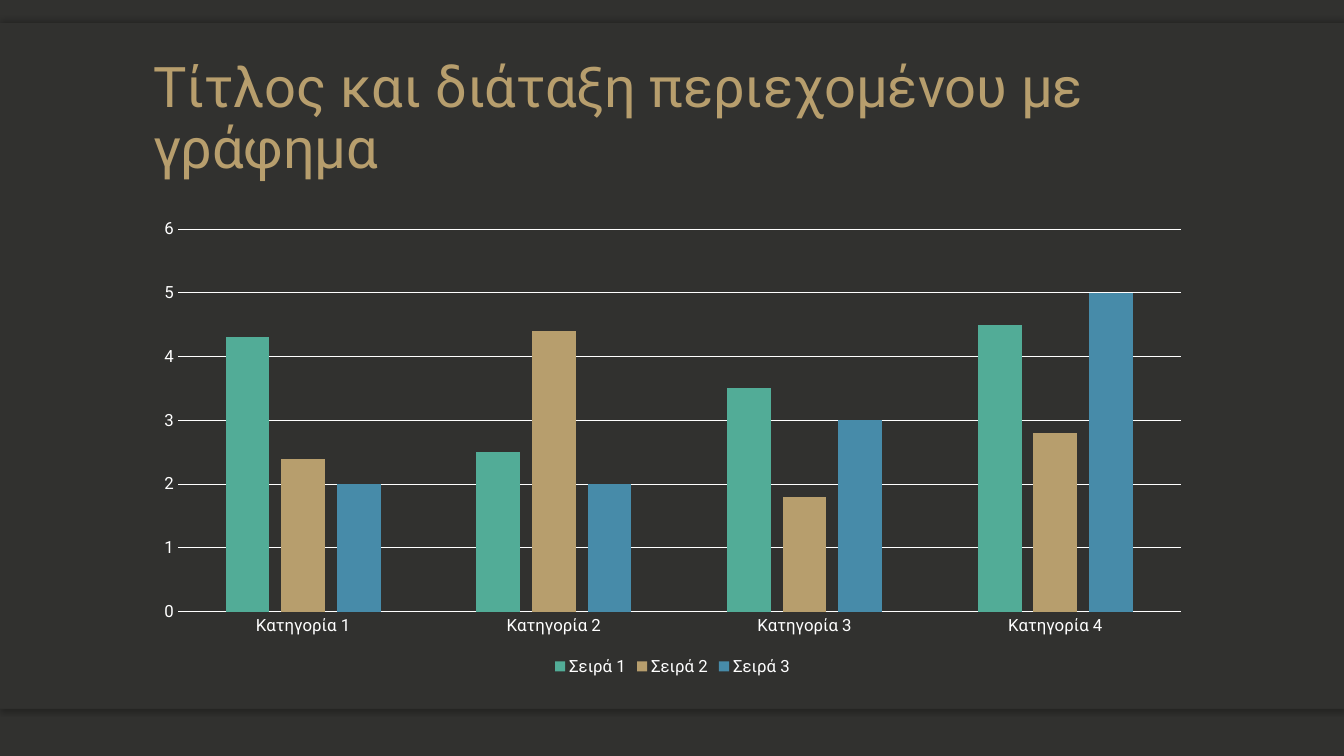
import pptx
import pptx.chart.data
import pptx.dml.color
import pptx.enum.chart
import pptx.enum.shapes
import pptx.enum.text
import pptx.oxml
import pptx.oxml.ns
import pptx.util
from pptx.util import Inches

THEME = {
    "font": "Roboto",
    "background": "31312F",
    "title": "B79E6D",
    "text": "FFFFFF",
    "series": ["52AC97", "B79E6D", "478BA9"],
    "title_size": 40,
    "chart_size": 10,
    "label_size": 12,
    "line_width": 0.75,
}


def color(code):
    return pptx.dml.color.RGBColor.from_string(code)


def style_font(font, size, code):
    font.name = THEME["font"]
    font.size = pptx.util.Pt(size)
    font.color.rgb = color(code)


deck = pptx.Presentation()
deck.slide_width = Inches(13.33)
deck.slide_height = Inches(7.5)
page = deck.slides.add_slide(deck.slide_layouts[6])
page.background.fill.solid()
page.background.fill.fore_color.rgb = color(THEME["background"])

bands = [(6.54, 0.49, 90), (0.23, 0.49, 270), (0.23, 6.8, None)]
for top, height, angle in bands:
    band = page.shapes.add_shape(
        pptx.enum.shapes.MSO_SHAPE.RECTANGLE, 0, Inches(top), deck.slide_width, Inches(height)
    )
    band.fill.solid()
    band.fill.fore_color.rgb = color(THEME["background"])
    band.line.fill.background()
    band.shadow.inherit = False
    if angle is not None:
        effects = band._element.spPr.find(pptx.oxml.ns.qn("a:effectLst"))
        effects.append(pptx.oxml.parse_xml(
            f'<a:outerShdw {pptx.oxml.ns.nsdecls("a")} blurRad="{pptx.util.Pt(4)}" '
            f'dist="{pptx.util.Pt(2)}" dir="{angle * 60000}" algn="ctr" rotWithShape="0">'
            '<a:srgbClr val="000000"><a:alpha val="25000"/></a:srgbClr></a:outerShdw>'
        ))

title = page.shapes.add_textbox(Inches(1.42), Inches(0.46), Inches(10.5), Inches(1.38))
title.text_frame.word_wrap = True
title.text_frame.vertical_anchor = pptx.enum.text.MSO_ANCHOR.BOTTOM
para = title.text_frame.paragraphs[0]
para.line_spacing = 0.9
span = para.add_run()
span.text = "Τίτλος και διάταξη περιεχομένου με γράφημα"
style_font(span.font, THEME["title_size"], THEME["title"])

data = pptx.chart.data.CategoryChartData()
data.categories = [f"Κατηγορία {number}" for number in range(1, 5)]
data.add_series("Σειρά 1", [4.3, 2.5, 3.5, 4.5])
data.add_series("Σειρά 2", [2.4, 4.4, 1.8, 2.8])
data.add_series("Σειρά 3", [2, 2, 3, 5])
chart = page.shapes.add_chart(
    pptx.enum.chart.XL_CHART_TYPE.COLUMN_CLUSTERED,
    Inches(1.42), Inches(2.08), Inches(10.5), Inches(4.67), data,
).chart
chart.has_title = False
style_font(chart.font, THEME["chart_size"], THEME["text"])

plot = chart.plots[0]
plot.gap_width = 219
plot.overlap = -27
plot.vary_by_categories = False
for series, code in zip(plot.series, THEME["series"]):
    series.format.fill.solid()
    series.format.fill.fore_color.rgb = color(code)
    series.invert_if_negative = False

for axis in (chart.category_axis, chart.value_axis):
    axis.major_tick_mark = pptx.enum.chart.XL_TICK_MARK.NONE
    axis.minor_tick_mark = pptx.enum.chart.XL_TICK_MARK.NONE
    style_font(axis.tick_labels.font, THEME["label_size"], THEME["text"])

value_axis = chart.value_axis
value_axis.minimum_scale = 0
value_axis.maximum_scale = 6
value_axis.major_unit = 1
value_axis.has_major_gridlines = True
value_axis.format.line.fill.background()
for line in (chart.category_axis.format.line, value_axis.major_gridlines.format.line):
    line.color.rgb = color(THEME["text"])
    line.width = pptx.util.Pt(THEME["line_width"])

chart.has_legend = True
chart.legend.position = pptx.enum.chart.XL_LEGEND_POSITION.BOTTOM
chart.legend.include_in_layout = False
style_font(chart.legend.font, THEME["label_size"], THEME["text"])

deck.save("out.pptx")
